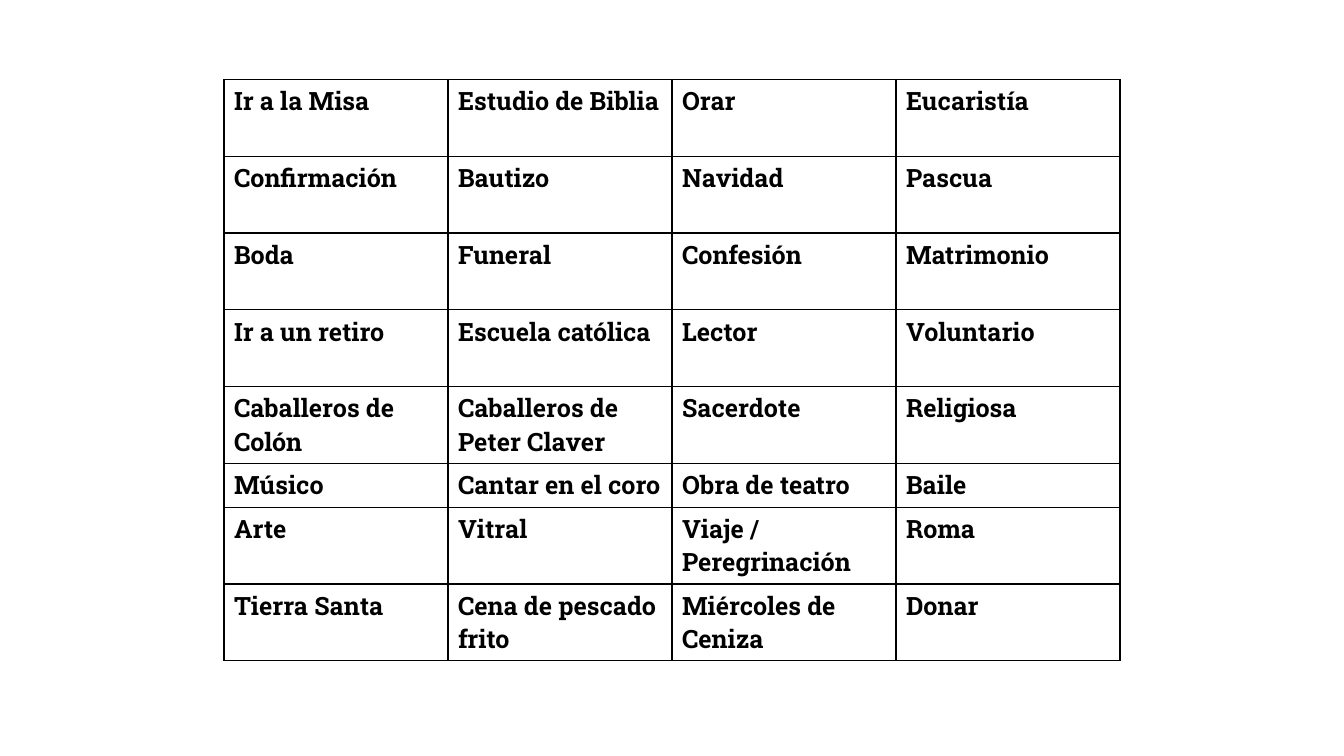
import dataclasses

import pptx
import pptx.dml.color
import pptx.oxml
import pptx.oxml.ns
import pptx.util

WIDE = pptx.util.Inches(13.33)
HIGH = pptx.util.Inches(7.5)
COL = WIDE / 6
ROW = HIGH / 100
LEFT, TOP = 1, 10.5
TALL, SHORT = 10.16, 5.8
FONT = "Roboto Slab"
SIZE = 18
LINE = 1
HUES = {"ink": "000000", "paper": "FFFFFF"}


@dataclasses.dataclass(frozen=True)
class Band:
    words: tuple[str, ...]
    rows: float = TALL


BANDS = [
    Band(("Ir a la Misa", "Estudio de Biblia", "Orar", "Eucaristía")),
    Band(("Confirmación", "Bautizo", "Navidad", "Pascua")),
    Band(("Boda", "Funeral", "Confesión", "Matrimonio")),
    Band(("Ir a un retiro", "Escuela católica", "Lector", "Voluntario")),
    Band(("Caballeros de Colón", "Caballeros de Peter Claver", "Sacerdote", "Religiosa")),
    Band(("Músico", "Cantar en el coro", "Obra de teatro", "Baile"), SHORT),
    Band(("Arte", "Vitral", "Viaje / Peregrinación", "Roma")),
    Band(("Tierra Santa", "Cena de pescado frito", "Miércoles de Ceniza", "Donar")),
]


def hue(name: str) -> pptx.dml.color.RGBColor:
    return pptx.dml.color.RGBColor.from_string(HUES[name])


def frame(cell) -> None:
    props = cell._tc.get_or_add_tcPr()
    width = int(pptx.util.Pt(LINE))
    for side in "LRTB":
        props.append(pptx.oxml.parse_xml(
            f'<a:ln{side} {pptx.oxml.ns.nsdecls("a")} w="{width}">'
            f'<a:solidFill><a:srgbClr val="{HUES["ink"]}"/></a:solidFill>'
            f'</a:ln{side}>'))


def write(cell, text: str) -> None:
    frame(cell)
    cell.fill.solid()
    cell.fill.fore_color.rgb = hue("paper")
    run = cell.text_frame.paragraphs[0].add_run()
    run.text = text
    run.font.name = FONT
    run.font.size = pptx.util.Pt(SIZE)
    run.font.bold = True
    run.font.color.rgb = hue("ink")


def draw(slide, bands: list[Band]) -> None:
    count = len(bands[0].words)
    total = sum(band.rows for band in bands)
    table = slide.shapes.add_table(
        len(bands), count, round(LEFT * COL), round(TOP * ROW),
        round(count * COL), round(total * ROW)).table
    table.first_row = False
    table.horz_banding = False
    for column in table.columns:
        column.width = round(COL)
    for y, band in enumerate(bands):
        table.rows[y].height = round(band.rows * ROW)
        for x, text in enumerate(band.words):
            write(table.cell(y, x), text)


def main() -> None:
    deck = pptx.Presentation()
    deck.slide_width, deck.slide_height = WIDE, HIGH
    draw(deck.slides.add_slide(deck.slide_layouts[6]), BANDS)
    deck.save("out.pptx")


if __name__ == "__main__":
    main()
